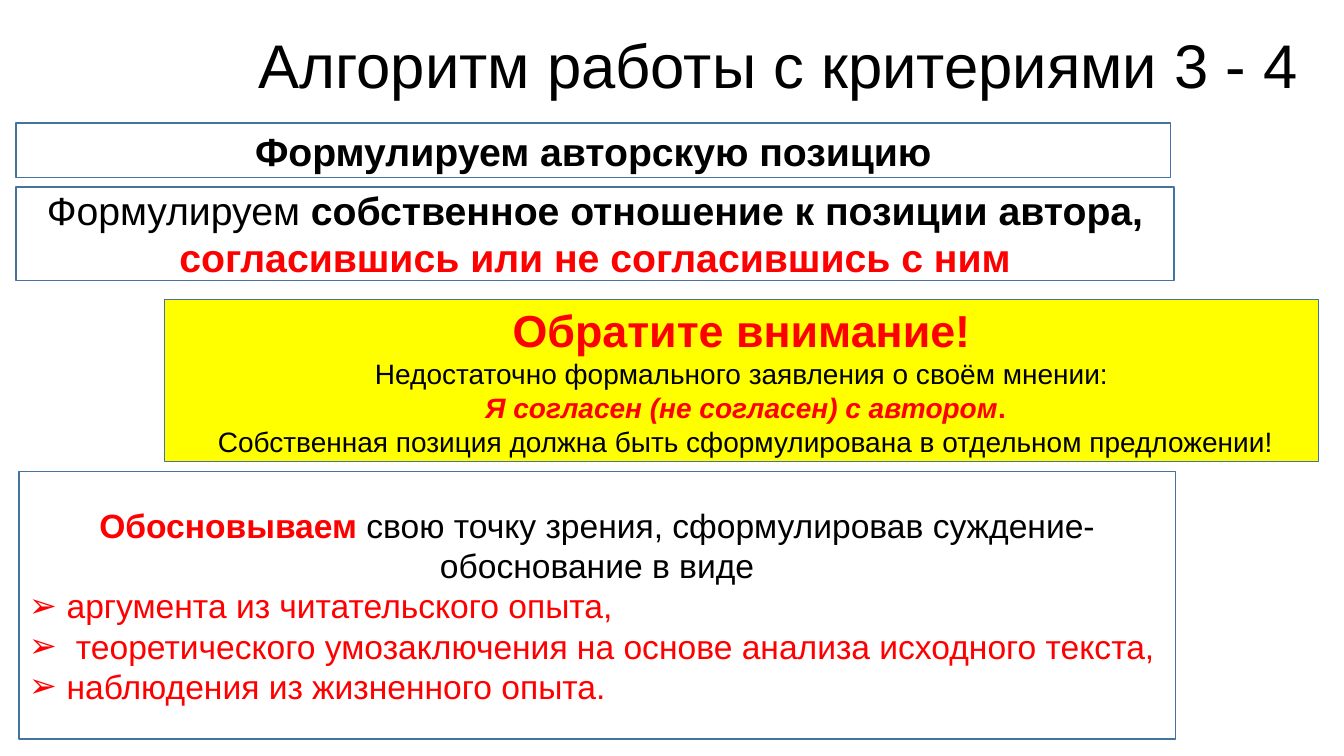
"""Builds the slide on working with criteria 3 and 4."""
from dataclasses import dataclass

from lxml import etree
from pptx import Presentation
from pptx import util as u
from pptx.dml.color import RGBColor
from pptx.enum import shapes, text
from pptx.oxml.ns import qn


@dataclass(frozen=True)
class Theme:
    font: str = "Arial"
    black: str = "000000"
    red: str = "FF0000"
    yellow: str = "FFFF00"
    outline: str = "43739E"
    title: int = 44
    warning: int = 32
    heading: int = 28
    body: int = 24
    note: int = 20
    bullet: str = "➢"
    indent: float = 27


class SlideBuilder:
    def __init__(self, slide, theme):
        self.slide = slide
        self.theme = theme

    def run(self, content, size, color=None, **formats):
        color = color or self.theme.black
        return content, color, {"name": self.theme.font, "size": u.Pt(size), **formats}

    def fill_text(self, shape, paragraphs, align, spacing=1.0):
        frame = shape.text_frame
        settings = {"word_wrap": True, "vertical_anchor": text.MSO_ANCHOR.MIDDLE}
        for name, value in settings.items():
            setattr(frame, name, value)
        for index, (runs, bulleted) in enumerate(paragraphs):
            paragraph = frame.add_paragraph() if index else frame.paragraphs[0]
            paragraph.alignment = text.PP_ALIGN.LEFT if bulleted else align
            paragraph.line_spacing = spacing
            if bulleted:
                self.add_bullet(paragraph)
            for content, color, formats in runs:
                run = paragraph.add_run()
                run.text = content
                run.font.color.rgb = RGBColor.from_string(color)
                for name, value in formats.items():
                    setattr(run.font, name, value)

    def add_bullet(self, paragraph):
        properties = paragraph._p.get_or_add_pPr()
        indent = int(u.Pt(self.theme.indent))
        for name, value in {"marL": indent, "indent": -indent}.items():
            properties.set(name, str(value))
        etree.SubElement(properties, qn("a:buFont"), typeface=self.theme.font)
        etree.SubElement(properties, qn("a:buChar"), char=self.theme.bullet)

    def title(self, bounds, content):
        shape = self.slide.shapes.add_textbox(*map(u.Pt, bounds))
        runs = [self.run(content, self.theme.title)]
        self.fill_text(shape, [(runs, False)], text.PP_ALIGN.RIGHT, 0.9)

    def box(self, bounds, paragraphs, fill=None):
        shape = self.slide.shapes.add_shape(
            shapes.MSO_SHAPE.RECTANGLE, *map(u.Pt, bounds))
        shape.shadow.inherit = False
        if fill:
            shape.fill.solid()
            shape.fill.fore_color.rgb = RGBColor.from_string(fill)
        else:
            shape.fill.background()
        shape.line.color.rgb = RGBColor.from_string(self.theme.outline)
        shape.line.width = u.Pt(1)
        self.fill_text(shape, paragraphs, text.PP_ALIGN.CENTER)


def main():
    theme = Theme()
    presentation = Presentation()
    presentation.slide_width, presentation.slide_height = u.Pt(960), u.Pt(540)
    slide = presentation.slides.add_slide(presentation.slide_layouts[6])
    builder = SlideBuilder(slide, theme)
    run = builder.run

    builder.title((48, 21.5, 887, 55), "Алгоритм работы с критериями 3 - 4")

    builder.box((11.5, 88, 824.5, 39), [
        ([run("Формулируем авторскую позицию", theme.heading, bold=True)], False),
    ])

    builder.box((11.5, 133.5, 827, 67), [
        ([run("Формулируем ", theme.heading),
          run("собственное отношение к позиции автора,", theme.heading, bold=True)], False),
        ([run("согласившись или не согласившись с ним", theme.heading, theme.red,
              bold=True)], False),
    ])

    reasons = [
        "аргумента из читательского опыта,",
        " теоретического умозаключения на основе анализа исходного текста,",
        "наблюдения из жизненного опыта.",
    ]
    builder.box((13.5, 337, 826, 191), [
        ([run("Обосновываем ", theme.body, theme.red, bold=True),
          run("свою точку зрения, сформулировав суждение-обоснование в виде",
              theme.body)], False),
        *[([run(reason, theme.body, theme.red)], True) for reason in reasons],
    ])

    builder.box((117.5, 214, 824.5, 115.5), [
        ([run("Обратите внимание!", theme.warning, theme.red, bold=True)], False),
        ([run("Недостаточно формального заявления о своём мнении:", theme.note)], False),
        ([run(" ", theme.note, theme.red, bold=True),
          run("Я согласен (не согласен) с автором", theme.note, theme.red,
              bold=True, italic=True),
          run(".", theme.note, theme.red, bold=True)], False),
        ([run(" Собственная позиция должна быть сформулирована в отдельном предложении!",
              theme.note)], False),
    ], theme.yellow)

    presentation.save("out.pptx")


if __name__ == "__main__":
    main()
